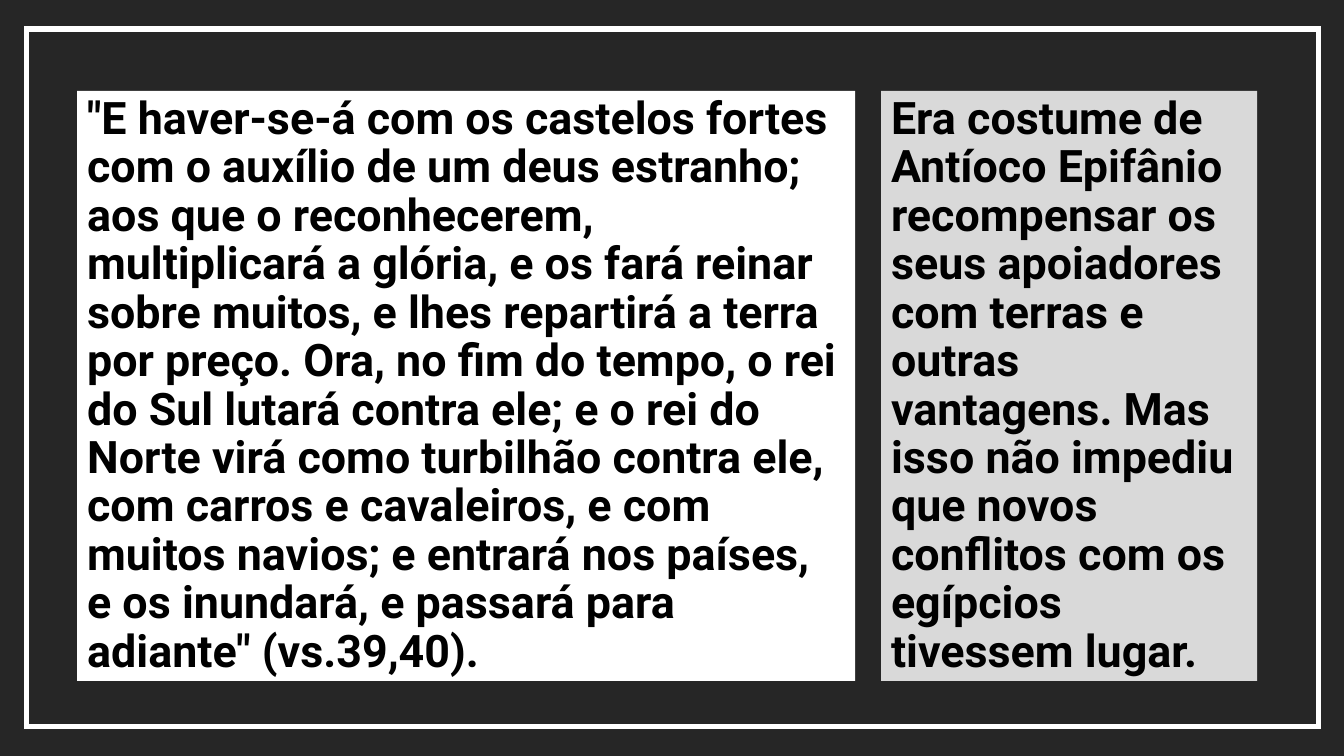
from lxml import etree
from pptx import Presentation
from pptx.dml.color import RGBColor
from pptx.enum import shapes, text
from pptx.oxml import ns
from pptx.util import Pt

COLOURS = {
    "background": "262626",
    "frame": "FFFFFF",
    "verse": "FFFFFF",
    "comment": "D9D9D9",
    "text": "000000",
}
WIDTH, HEIGHT = 960, 540
PANEL_TOP, PANEL_HEIGHT = 64.9, 421.4
RIGHT_INSET = 11.4

VERSE = (
    '"E haver-se-á com os castelos fortes com o auxílio de um deus estranho; '
    "aos que o reconhecerem, multiplicará a glória, e os fará reinar sobre muitos, "
    "e lhes repartirá a terra por preço. Ora, no fim do tempo, o rei do Sul lutará "
    "contra ele; e o rei do Norte virá como turbilhão contra ele, com carros e "
    "cavaleiros, e com muitos navios; e entrará nos países, e os inundará, e passará "
    'para adiante" (vs.39,40).'
)
COMMENT = (
    "Era costume de Antíoco Epifânio recompensar os seus apoiadores com terras e "
    "outras vantagens. Mas isso não impediu que novos conflitos com os egípcios "
    "tivessem lugar."
)


def colour(name):
    return RGBColor.from_string(COLOURS[name])


def add_rectangle(slide, left, top, width, height):
    rectangle = slide.shapes.add_shape(
        shapes.MSO_SHAPE.RECTANGLE, Pt(left), Pt(top), Pt(width), Pt(height))
    rectangle.shadow.inherit = False
    return rectangle


def add_background(slide, left, top, width, height):
    background = add_rectangle(slide, left, top, width, height)
    background.fill.solid()
    background.fill.fore_color.rgb = colour("background")
    background.line.fill.background()


def add_frame(slide, left, top, width, height):
    frame = add_rectangle(slide, left, top, width, height)
    frame.fill.background()
    frame.line.color.rgb = colour("frame")
    frame.line.width = Pt(4)
    line = frame.element.spPr.find(ns.qn("a:ln"))
    etree.SubElement(line, ns.qn("a:miter"), lim="800000")


def add_panel(slide, left, top, width, height, fill, wording):
    panel = slide.shapes.add_textbox(Pt(left), Pt(top), Pt(width), Pt(height))
    panel.fill.solid()
    panel.fill.fore_color.rgb = colour(fill)
    frame = panel.text_frame
    frame.word_wrap = True
    frame.auto_size = text.MSO_AUTO_SIZE.NONE
    frame.vertical_anchor = text.MSO_ANCHOR.TOP
    frame.margin_right = Pt(RIGHT_INSET)
    paragraph = frame.paragraphs[0]
    paragraph.text = wording
    paragraph.line_spacing = 0.9
    paragraph.space_before = Pt(10)
    paragraph.font.name = "Roboto"
    paragraph.font.size = Pt(32)
    paragraph.font.bold = True
    paragraph.font.color.rgb = colour("text")


def build_slide(presentation):
    slide = presentation.slides.add_slide(presentation.slide_layouts[6])
    add_background(slide, 0, 0, WIDTH, HEIGHT)
    add_frame(slide, 19, 20.9, 922.8, 498.2)
    add_panel(slide, 55.2, PANEL_TOP, 555.6, PANEL_HEIGHT, "verse", VERSE)
    add_panel(slide, 629.4, PANEL_TOP, 268.6, PANEL_HEIGHT, "comment", COMMENT)


def main():
    presentation = Presentation()
    presentation.slide_width = Pt(WIDTH)
    presentation.slide_height = Pt(HEIGHT)
    build_slide(presentation)
    presentation.save("out.pptx")


if __name__ == "__main__":
    main()
